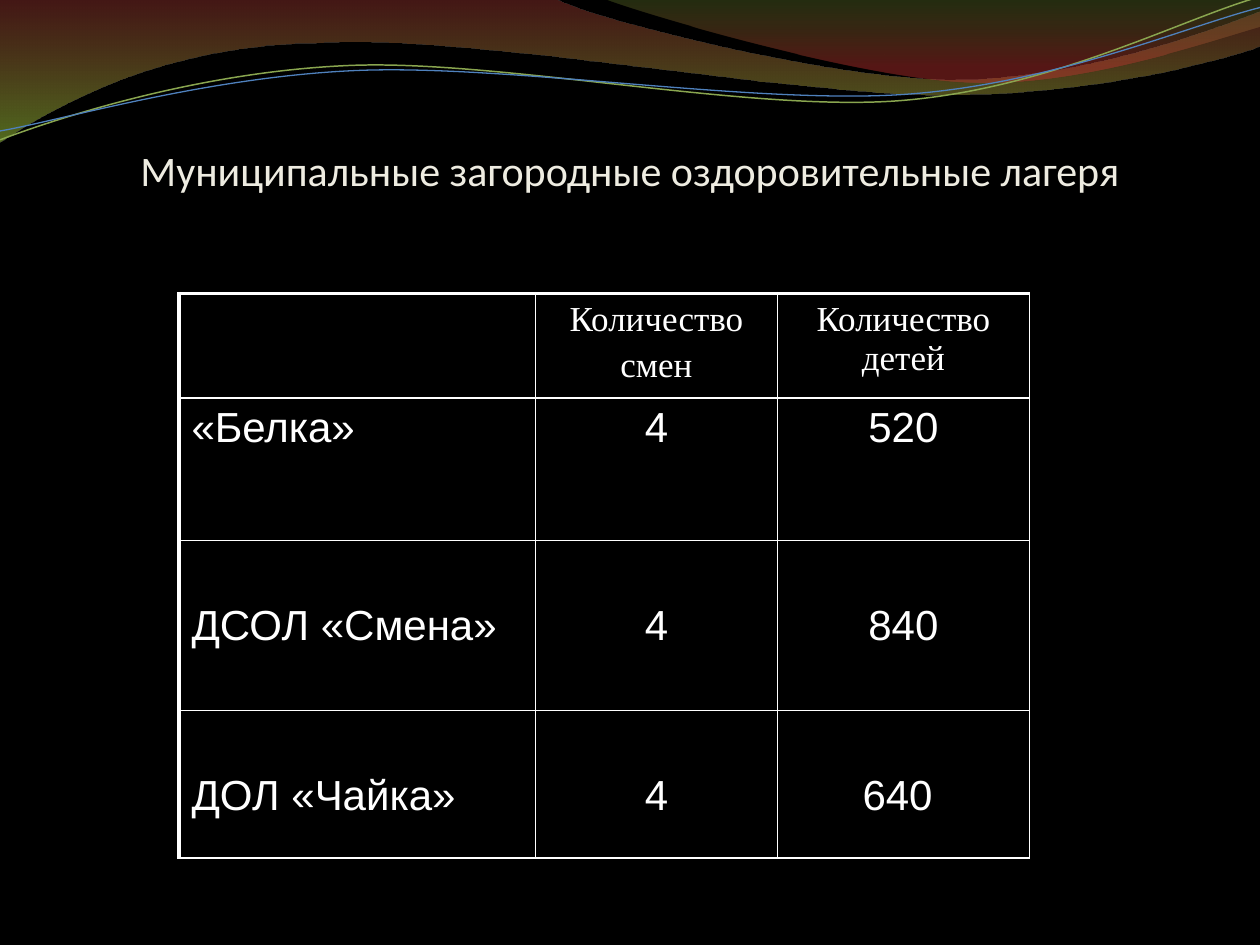
from math import cos, radians, sin
from lxml.etree import SubElement
from pptx import Presentation
from pptx.dml.color import RGBColor
from pptx.enum.text import MSO_ANCHOR as Anchor, MSO_AUTO_SIZE as AutoSize, PP_ALIGN as Align
from pptx.oxml.ns import qn
from pptx.util import Inches, Pt

BLACK, WHITE, CREAM = "000000", "FFFFFF", "EEECE1"
LINE_TILT = 357.3

RED_WAVE = [
    (0, -0.01), (4.4, -0.01), (4.76, 0.17, 6.64, 0.63, 7.58, 0.63),
    (8.53, 0.63, 9.58, 0.26, 10, 0.09), (10.01, 0.36),
    (9.83, 0.44, 8.7, 0.76, 7.46, 0.75), (6.22, 0.75, 3.82, 0.28, 2.57, 0.34),
    (1.29, 0.35, 0.46, 0.83, -0.01, 1.13), (0, -0.01),
]
GREEN_WAVE = [
    (4.79, -0.01), (5.09, 0.11, 6.82, 0.62, 7.69, 0.65),
    (8.56, 0.69, 9.61, 0.32, 10, 0.21), (10, 0), (4.79, -0.01),
]
GREEN_LINE = [
    (0, 1.11), (0.48, 0.93, 1.58, 0.57, 2.77, 0.52),
    (3.95, 0.47, 5.93, 0.89, 7.13, 0.8), (8.33, 0.71, 9.38, 0.15, 9.98, -0.02),
]
BLUE_LINE = [
    (0, 1.04), (0.47, 0.96, 1.64, 0.61, 2.83, 0.56),
    (4.03, 0.51, 5.97, 0.83, 7.17, 0.75), (8.36, 0.67, 9.41, 0.21, 10, 0.06),
]

CAMPS = [
    ["", "Количество\nсмен", "Количество детей"],
    ["«Белка»", "4", "520"],
    ["ДСОЛ «Смена»", "4", "840"],
    ["ДОЛ «Чайка»", "4", "640 "],
]
COLUMN_WIDTHS = [2.83, 1.92, 2]
ROW_HEIGHTS = [0.83, 1.13, 1.35, 1.17]


def color(value):
    return RGBColor.from_string(value)


def write_text(text_frame, text, size, font, fill=WHITE, align=Align.CENTER):
    for index, line in enumerate(text.split("\n")):
        paragraph = text_frame.paragraphs[0] if index == 0 else text_frame.add_paragraph()
        paragraph.alignment = align
        if index:
            paragraph.space_before = Pt(size * 0.2)
        run = paragraph.add_run()
        run.text = line
        run.font.size = Pt(size)
        run.font.name = font
        run.font.color.rgb = color(fill)


def pair_points(segment):
    return list(zip(segment[::2], segment[1::2]))


def turn(segment, center, degrees):
    angle = radians(degrees)
    turned = []
    for x, y in pair_points(segment):
        dx, dy = x - center[0], y - center[1]
        turned += [center[0] + dx * cos(angle) - dy * sin(angle),
                   center[1] + dx * sin(angle) + dy * cos(angle)]
    return tuple(turned)


def add_outline(slide, segments, close):
    anchors = [(Inches(segment[-2]), Inches(segment[-1])) for segment in segments]
    builder = slide.shapes.build_freeform(*anchors[0])
    builder.add_line_segments(anchors[1:], close=close)
    shape = builder.convert_to_shape()
    shape.shadow.inherit = False
    straight_parts = list(shape._element.iter(qn("a:lnTo")))
    for part, segment in zip(straight_parts, segments[1:]):
        if len(segment) == 6:
            outline = part.getparent()
            curve = SubElement(outline, qn("a:cubicBezTo"))
            for x, y in pair_points(segment):
                SubElement(curve, qn("a:pt"),
                           x=str(Inches(x) - shape.left), y=str(Inches(y) - shape.top))
            outline.replace(part, curve)
    return shape


def add_wave(slide, segments, stops):
    shape = add_outline(slide, segments, True)
    shape.line.fill.background()
    shape.fill.gradient()
    gradient = shape._element.spPr.find(qn("a:gradFill"))
    for child in list(gradient):
        gradient.remove(child)
    stop_list = SubElement(gradient, qn("a:gsLst"))
    for position, value, opacity in stops:
        stop = SubElement(stop_list, qn("a:gs"), pos=str(position * 1000))
        stop_color = SubElement(stop, qn("a:srgbClr"), val=value)
        SubElement(stop_color, qn("a:alpha"), val=str(opacity * 1000))
    SubElement(gradient, qn("a:lin"), ang="5400000", scaled="0")


def add_wave_line(slide, segments, center, value, width):
    level = [turn(segment, center, -LINE_TILT) for segment in segments]
    shape = add_outline(slide, level, False)
    shape.rotation = LINE_TILT
    shape.fill.background()
    shape.line.color.rgb = color(value)
    shape.line.width = Pt(width)


def add_waves(slide):
    add_wave(slide, RED_WAVE, [(0, "973330", 45), (100, "95C238", 55)])
    add_wave(slide, GREEN_WAVE, [(0, "769537", 30), (80, "BE3330", 45)])
    add_wave_line(slide, GREEN_LINE, (4.99, 0.58), "89A54F", 0.85)
    add_wave_line(slide, BLUE_LINE, (5, 0.59), "4F81BD", 0.75)


def place_title(slide, left, top, width, height):
    title = slide.shapes.title
    title.left, title.top = Inches(left), Inches(top)
    title.width, title.height = Inches(width), Inches(height)
    frame = title.text_frame
    frame.auto_size = AutoSize.NONE
    frame.word_wrap = True
    frame.vertical_anchor = Anchor.BOTTOM
    frame.margin_left = frame.margin_right = frame.margin_bottom = 0
    frame.margin_top = Inches(0.05)
    write_text(frame, "Муниципальные загородные оздоровительные лагеря", 24, "Calibri", CREAM)


def set_borders(cell, **widths):
    properties = cell._tc.get_or_add_tcPr()
    for index, (side, width) in enumerate(widths.items()):
        line = SubElement(properties, qn(f"a:ln{side}"), w=str(Pt(width)))
        fill = SubElement(line, qn("a:solidFill"))
        SubElement(fill, qn("a:srgbClr"), val=WHITE)
        properties.insert(index, line)


def add_camp_table(slide, left, top, width, height):
    frame = slide.shapes.add_table(
        len(CAMPS), len(COLUMN_WIDTHS), Inches(left), Inches(top), Inches(width), Inches(height))
    table = frame.table
    table.first_row = table.horz_banding = False
    for column, column_width in zip(table.columns, COLUMN_WIDTHS):
        column.width = Inches(column_width)
    for row, row_height in zip(table.rows, ROW_HEIGHTS):
        row.height = Inches(row_height)
    for i, texts in enumerate(CAMPS):
        for j, text in enumerate(texts):
            cell = table.cell(i, j)
            cell.fill.background()
            set_borders(cell, L=1 if j else 2.25, R=1, T=1 if i else 2.25, B=1)
            cell.vertical_anchor = Anchor.MIDDLE if i > 1 else Anchor.TOP
            if i == 3:
                cell.margin_top = Inches(0.23)
            size, font = (24, "Arial") if i else (20, "Times New Roman")
            if text:
                write_text(cell.text_frame, text, size, font,
                           align=Align.CENTER if j else Align.LEFT)


def build_camps_slide(presentation):
    slide = presentation.slides.add_slide(presentation.slide_layouts[5])
    slide.background.fill.solid()
    slide.background.fill.fore_color.rgb = color(BLACK)
    add_waves(slide)
    place_title(slide, 0.5, 0.3, 9, 1.25)
    slide.shapes._spTree.append(slide.shapes.title._element)
    add_camp_table(slide, 1.42, 2.33, sum(COLUMN_WIDTHS), sum(ROW_HEIGHTS))


def main():
    presentation = Presentation()
    presentation.slide_width, presentation.slide_height = Inches(10), Inches(7.5)
    build_camps_slide(presentation)
    presentation.save("out.pptx")


if __name__ == "__main__":
    main()
